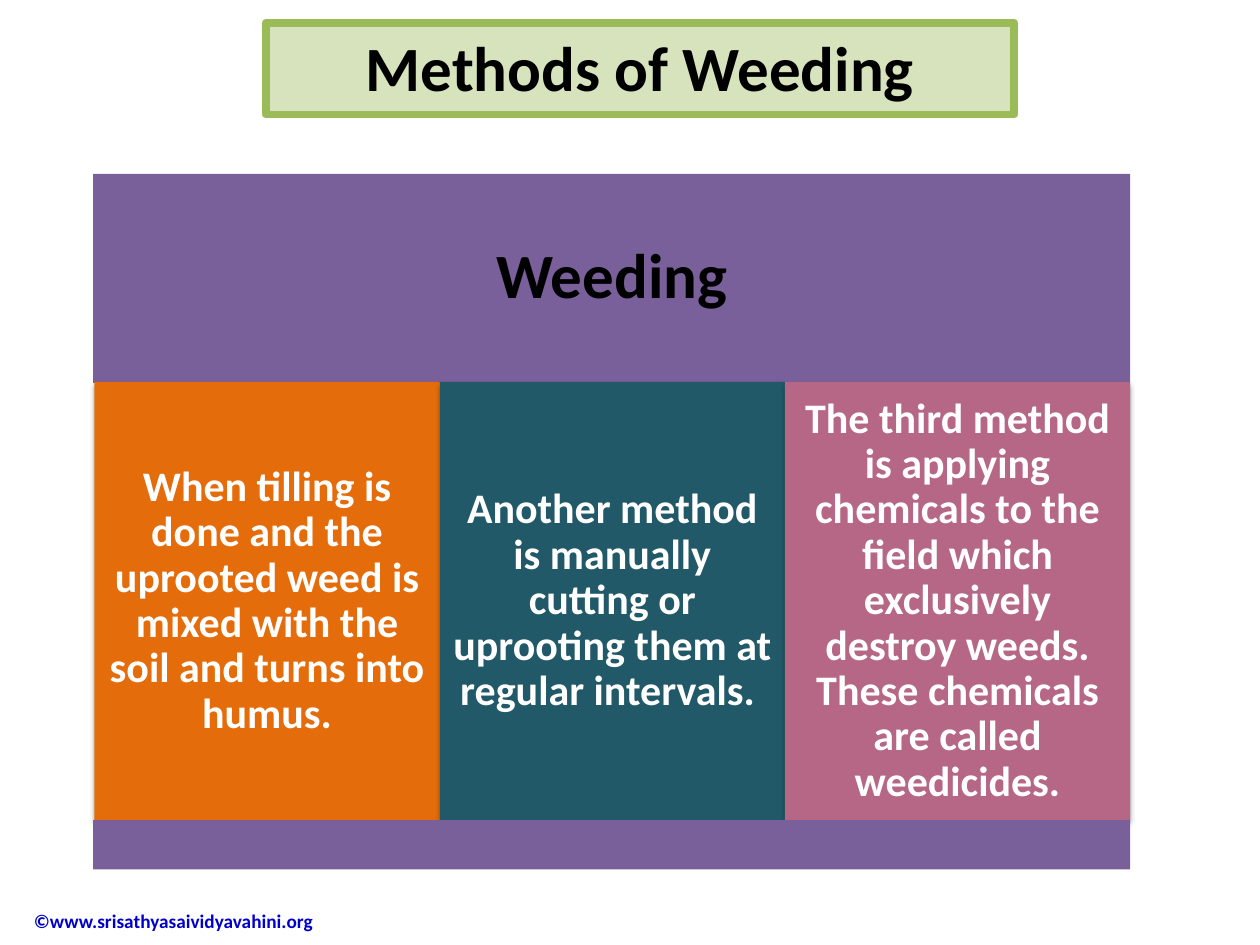
from lxml.etree import SubElement
from pptx import Presentation
from pptx.dml.color import RGBColor
from pptx.enum.shapes import MSO_SHAPE
from pptx.enum.text import MSO_ANCHOR, PP_ALIGN
from pptx.oxml.ns import qn
from pptx.util import Inches, Pt

BLACK = RGBColor(0x00, 0x00, 0x00)
WHITE = RGBColor(0xFF, 0xFF, 0xFF)
BLUE = RGBColor(0x00, 0x00, 0xCC)
PALE_GREEN = RGBColor(0xD6, 0xE3, 0xBC)
GREEN = RGBColor(0x9B, 0xBB, 0x59)
PURPLE = RGBColor(0x7A, 0x60, 0x9B)
ORANGE = RGBColor(0xE4, 0x6C, 0x0A)
TEAL = RGBColor(0x21, 0x59, 0x68)
PINK = RGBColor(0xB5, 0x67, 0x85)

HEADING = {"name": "Calibri", "size": Pt(36), "bold": True}
BODY = {"name": "Calibri", "size": Pt(24), "bold": True}
FOOTER = {"name": "Calibri", "size": Pt(11), "bold": True}

PANEL_LEFT, PANEL_WIDTH = 0.74, 8.23
CARD_LEFT, CARD_TOP, CARD_WIDTH, CARD_HEIGHT = 0.75, 3.03, 2.74, 3.48
METHODS = [
    ("When tilling is done and the uprooted weed is mixed with the soil "
     "and turns into humus.", ORANGE),
    ("Another method is manually cutting or uprooting them at regular "
     "intervals. ", TEAL),
    ("The third method is applying chemicals to the field which exclusively "
     "destroy weeds. These chemicals are called weedicides.", PINK),
]


def add_rectangle(slide, left, top, width, height, fill):
    shape = slide.shapes.add_shape(
        MSO_SHAPE.RECTANGLE, Inches(left), Inches(top), Inches(width), Inches(height))
    shape.shadow.inherit = False
    shape.fill.solid()
    shape.fill.fore_color.rgb = fill
    shape.line.fill.background()
    return shape


def add_shadow(shape):
    """Give the shape a soft shadow that falls straight down."""
    effects = shape._element.spPr.find(qn("a:effectLst"))
    shadow = SubElement(effects, qn("a:outerShdw"), blurRad=str(Pt(3.15)),
                        dist=str(Pt(1.8)), dir="5400000", rotWithShape="0")
    color = SubElement(shadow, qn("a:srgbClr"), val=str(BLACK))
    SubElement(color, qn("a:alpha"), val="35000")


def set_text(shape, text, font_format, color, align=PP_ALIGN.CENTER,
             anchor=MSO_ANCHOR.MIDDLE, inset=0.1, vertical_inset=0.05, line_spacing=1.0):
    frame = shape.text_frame
    frame_format = {
        "word_wrap": True, "vertical_anchor": anchor,
        "margin_left": Inches(inset), "margin_right": Inches(inset),
        "margin_top": Inches(vertical_inset), "margin_bottom": Inches(vertical_inset),
    }
    for name, value in frame_format.items():
        setattr(frame, name, value)
    paragraph = frame.paragraphs[0]
    paragraph.alignment = align
    paragraph.line_spacing = line_spacing
    run = paragraph.add_run()
    run.text = text
    for name, value in font_format.items():
        setattr(run.font, name, value)
    run.font.color.rgb = color


def add_title(slide):
    title = add_rectangle(slide, 2.11, 0.18, 5.94, 0.73, PALE_GREEN)
    title.line.color.rgb = GREEN
    title.line.width = Pt(4.5)
    set_text(title, "Methods of Weeding", HEADING, BLACK, anchor=MSO_ANCHOR.TOP)


def add_methods_panel(slide):
    header = add_rectangle(slide, PANEL_LEFT, 1.38, PANEL_WIDTH, 1.66, PURPLE)
    set_text(header, "Weeding", HEADING, BLACK, inset=0.15, vertical_inset=0.15,
             line_spacing=0.9)
    for index, (text, fill) in enumerate(METHODS):
        card = add_rectangle(slide, CARD_LEFT + index * CARD_WIDTH, CARD_TOP,
                             CARD_WIDTH, CARD_HEIGHT, fill)
        add_shadow(card)
        set_text(card, text, BODY, WHITE, vertical_inset=0.1, line_spacing=0.9)
    add_rectangle(slide, PANEL_LEFT, CARD_TOP + CARD_HEIGHT, PANEL_WIDTH, 0.39, PURPLE)


def add_footer(slide):
    footer = slide.shapes.add_textbox(Inches(0.17), Inches(7.1), Inches(2.52), Inches(0.41))
    set_text(footer, "©www.srisathyasaividyavahini.org", FOOTER, BLUE, align=PP_ALIGN.LEFT)


def main():
    presentation = Presentation()
    presentation.slide_width = Inches(10)
    presentation.slide_height = Inches(7.5)
    slide = presentation.slides.add_slide(presentation.slide_layouts[6])
    add_footer(slide)
    add_title(slide)
    add_methods_panel(slide)
    presentation.save("out.pptx")


if __name__ == "__main__":
    main()
